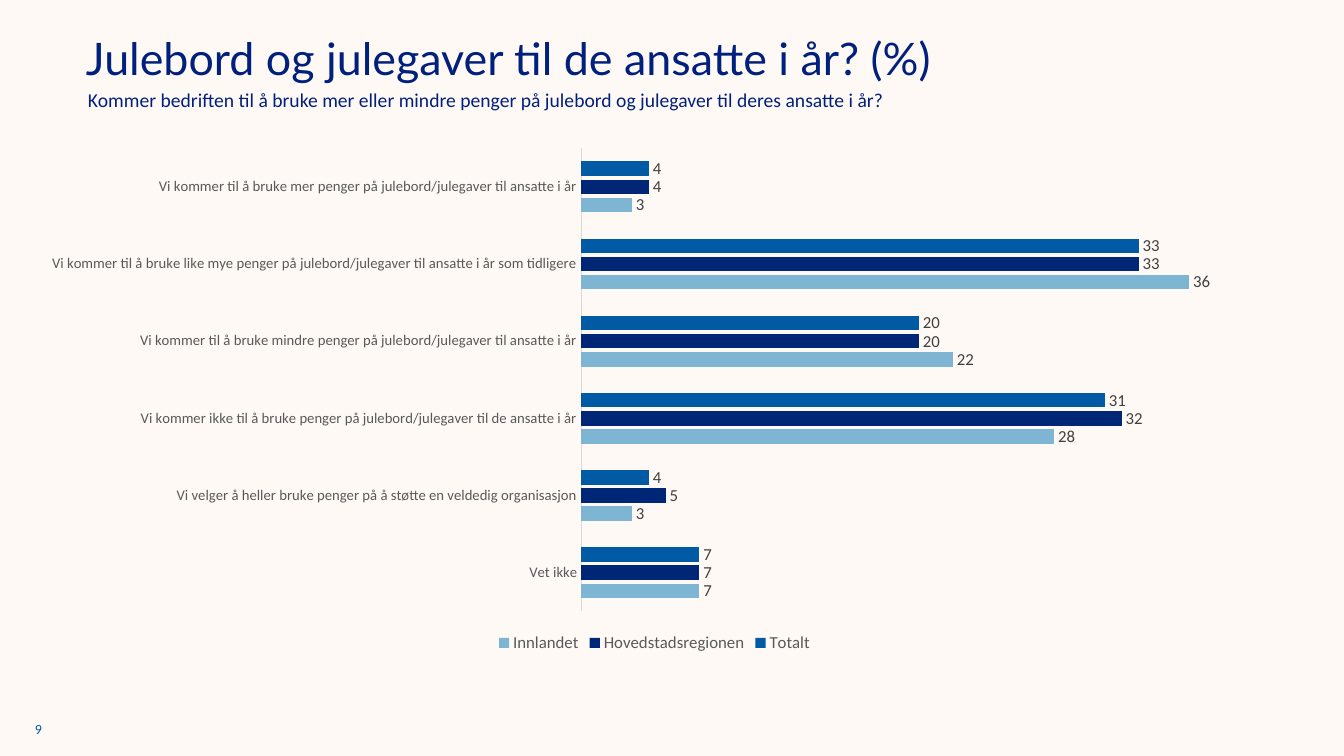
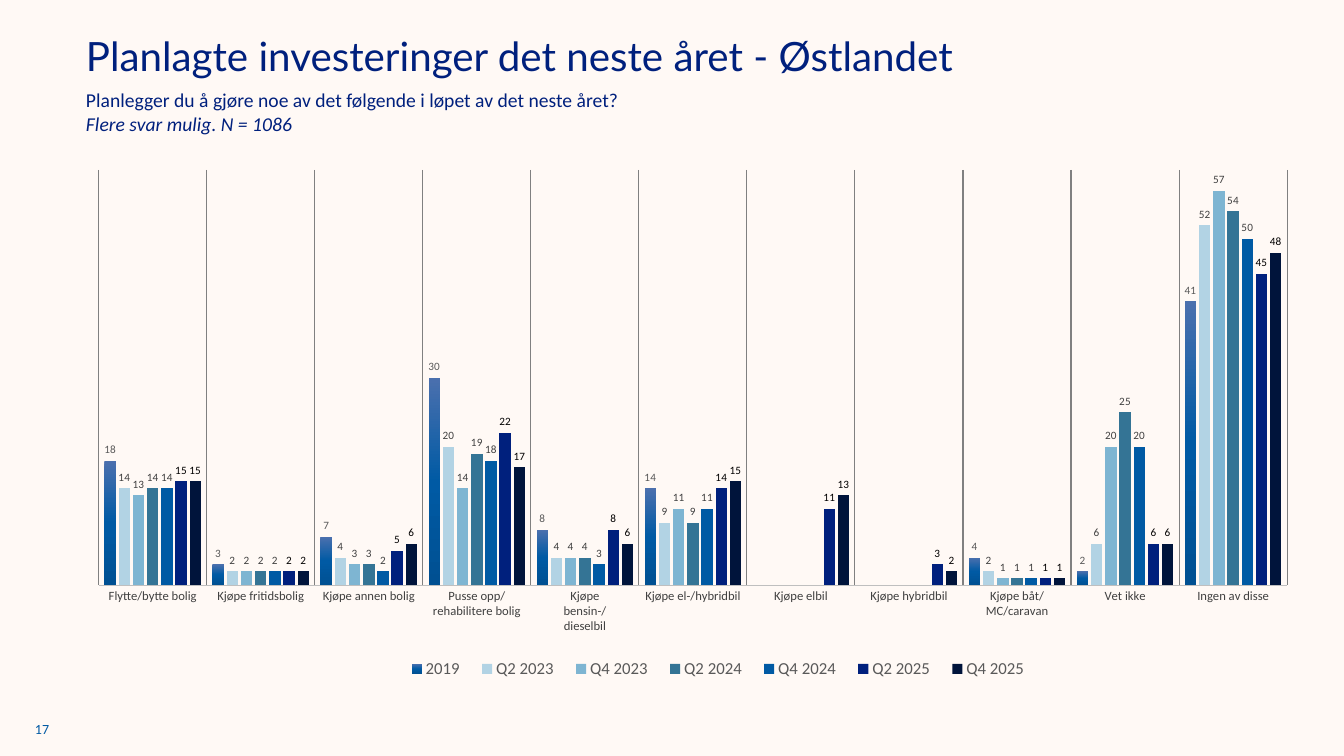
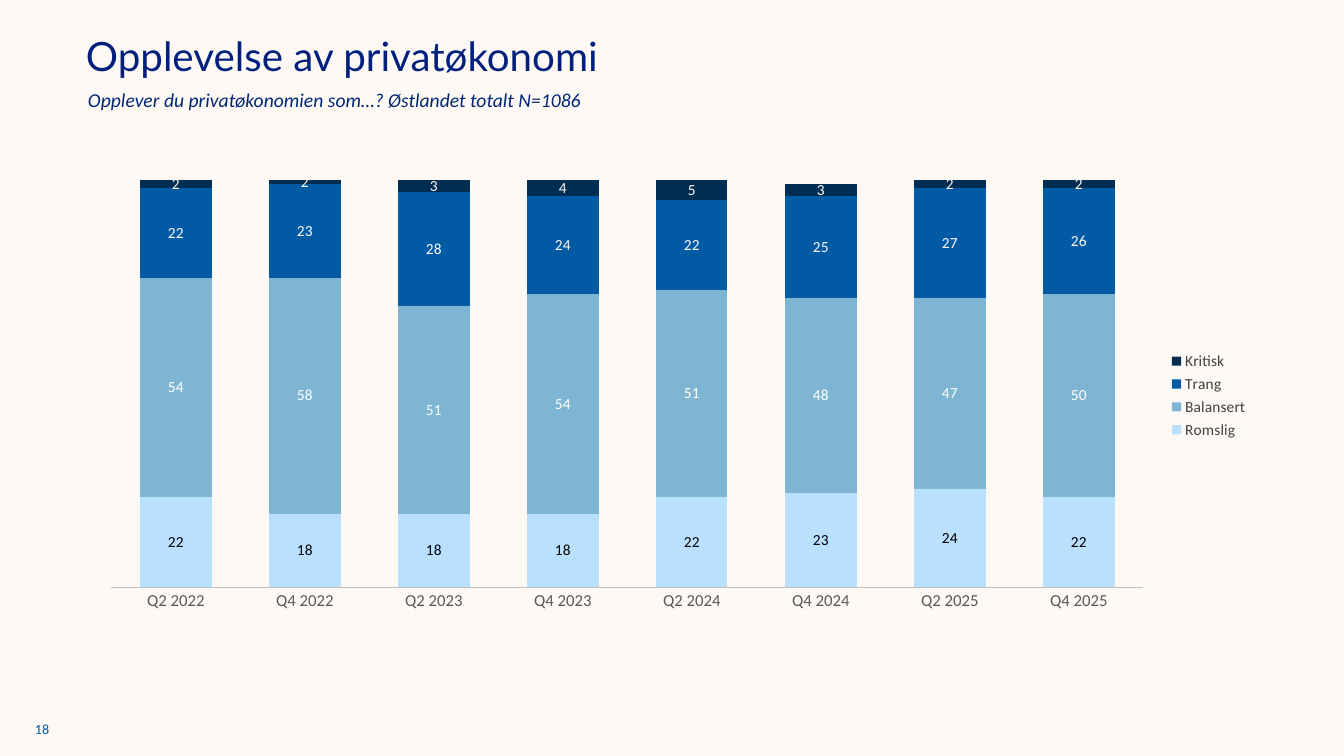
from copy import deepcopy
from dataclasses import dataclass
from typing import Optional

from lxml import etree
from pptx import Presentation
from pptx import util as u
from pptx.chart.data import CategoryChartData
from pptx.dml.color import RGBColor
from pptx.enum import chart as charts, text
from pptx.oxml import ns


@dataclass(frozen=True)
class Theme:
    font: str = "Calibri"
    title_font: str = "Lato"
    background: str = "FFF9F5"
    navy: str = "00207D"
    deep_navy: str = "002776"
    blue: str = "005AA4"
    sky: str = "7EB5D2"
    pale: str = "B2D3E4"
    ice: str = "BAE0FF"
    teal: str = "347495"
    midnight: str = "00143B"
    ink: str = "002D52"
    black: str = "000000"
    white: str = "FFFFFF"
    dark_grey: str = "404040"
    grey: str = "595959"
    grid: str = "808080"
    axis: str = "BFBFBF"
    light_axis: str = "D9D9D9"
    fade: tuple = ((0, "4B70AE"), (0.5, "005AA4"), (1, "005092"))
    title_large: float = 32
    title_size: float = 28.8
    subtitle_size: float = 14
    legend_size: float = 12
    small_legend: float = 11
    category_size: float = 10.5
    number_size: float = 10
    small_category: float = 9
    tiny: float = 8
    hairline: float = 0.75


THEME = Theme()
PX_PER_INCH = 100.8


@dataclass(frozen=True)
class Series:
    name: str
    values: tuple
    fill: object
    label_color: str


@dataclass(frozen=True)
class ChartStyle:
    kind: int
    gap: int
    overlap: int
    value_max: int
    label_size: float
    category_size: float
    category_color: str
    axis_color: str
    legend_position: int
    legend_size: float
    legend_color: str
    reverse: bool = False
    gridlines: bool = False
    label_position: Optional[int] = None


def px(length):
    return u.Emu(round(length * u.Inches(1) / PX_PER_INCH))


def frame(x, y, width, height):
    return px(x), px(y), px(width), px(height)


def style_font(font, size, color, name=THEME.font, italic=None):
    font.name = name
    font.size = u.Pt(size)
    font.color.rgb = RGBColor.from_string(color)
    font.italic = italic


def style_line(line, color):
    line.color.rgb = RGBColor.from_string(color)
    line.width = u.Pt(THEME.hairline)


def add_text(page, place, lines, size, color, name=THEME.font, italics=(),
             spacing=None, anchor=text.MSO_ANCHOR.TOP):
    """Add a text box without insets; italics holds the indexes of slanted lines."""
    box = page.shapes.add_textbox(*frame(*place)).text_frame
    box.word_wrap = True
    box.vertical_anchor = anchor
    box.margin_left = box.margin_top = box.margin_right = box.margin_bottom = 0
    box.text = "\n".join(lines)
    for index, para in enumerate(box.paragraphs):
        para.line_spacing = spacing
        for span in para.runs:
            style_font(span.font, size, color, name, index in italics or None)


def add_page(deck, number, title, subtitle, title_size=THEME.title_size,
             subtitle_x=88, subtitle_color=THEME.navy, italics=()):
    page = deck.slides.add_slide(deck.slide_layouts[6])
    add_text(page, (86, 37, 1171, 44), [title], title_size, THEME.navy,
             THEME.title_font, spacing=0.9)
    add_text(page, (subtitle_x, 88, 1171, 47), subtitle, THEME.subtitle_size,
             subtitle_color, italics=italics)
    add_text(page, (35, 720, 52, 17), [str(number)], THEME.number_size,
             THEME.blue, anchor=text.MSO_ANCHOR.MIDDLE)
    return page


def fill_gradient(series, stops):
    """Fill the bars from top to bottom through all the given stops."""
    fill = series.format.fill
    fill.gradient()
    fill.gradient_angle = 270
    stop_list = series._element.find(".//" + ns.qn("a:gsLst"))
    while len(stop_list) < len(stops):
        stop_list.append(deepcopy(stop_list[0]))
    for stop, (position, color) in zip(fill.gradient_stops, stops):
        stop.position = position
        stop.color.rgb = RGBColor.from_string(color)


def style_series(series, data, style):
    series.invert_if_negative = False
    if isinstance(data.fill, str):
        series.format.fill.solid()
        series.format.fill.fore_color.rgb = RGBColor.from_string(data.fill)
    else:
        fill_gradient(series, data.fill)
    labels = series.data_labels
    labels.show_value = True
    labels.number_format = "0"
    labels.number_format_is_linked = False
    style_font(labels.font, style.label_size, data.label_color)
    if style.label_position is not None:
        labels.position = style.label_position


def style_axes(chart, style):
    category = chart.category_axis
    category.major_tick_mark = category.minor_tick_mark = charts.XL_TICK_MARK.NONE
    category.reverse_order = style.reverse
    category.has_major_gridlines = style.gridlines
    if style.gridlines:
        style_line(category.major_gridlines.format.line, THEME.grid)
    style_line(category.format.line, style.axis_color)
    style_font(category.tick_labels.font, style.category_size, style.category_color)
    value = chart.value_axis
    value.visible = False
    value.has_major_gridlines = False
    value.minimum_scale = 0
    value.maximum_scale = style.value_max


def set_layout(element, x, y, width, height, inner=False):
    """Place a plot area or legend by fractions of the chart."""
    for old in element.findall(ns.qn("c:layout")):
        element.remove(old)
    layout = etree.Element(ns.qn("c:layout"))
    manual = etree.SubElement(layout, ns.qn("c:manualLayout"))
    settings = [("layoutTarget", "inner")] if inner else []
    settings += [("xMode", "edge"), ("yMode", "edge"),
                 ("x", x), ("y", y), ("w", width), ("h", height)]
    for tag, value in settings:
        etree.SubElement(manual, ns.qn("c:" + tag)).set("val", str(value))
    position = element.find(ns.qn("c:legendPos"))
    element.insert(0 if position is None else 1, layout)


def add_bar_chart(page, place, categories, rows, style):
    data = CategoryChartData()
    data.categories = categories
    for row in rows:
        data.add_series(row.name, row.values)
    chart = page.shapes.add_chart(style.kind, *frame(*place), data).chart
    chart.has_title = False
    style_font(chart.font, THEME.tiny, THEME.black)
    plot = chart.plots[0]
    plot.vary_by_categories = False
    plot.gap_width = style.gap
    plot.overlap = style.overlap
    for series, row in zip(plot.series, rows):
        style_series(series, row, style)
    style_axes(chart, style)
    chart.has_legend = True
    chart.legend.position = style.legend_position
    chart.legend.include_in_layout = False
    style_font(chart.legend.font, style.legend_size, style.legend_color)
    return chart


def build_christmas(deck):
    page = add_page(
        deck, 9, "Julebord og julegaver til de ansatte i år? (%)",
        ["Kommer bedriften til å bruke mer eller mindre penger på julebord "
         "og julegaver til deres ansatte i år?"],
        title_size=THEME.title_large)
    categories = [
        "Vi kommer til å bruke mer penger på julebord/julegaver til ansatte i år",
        "Vi kommer til å bruke like mye penger på julebord/julegaver til ansatte i år som tidligere",
        "Vi kommer til å bruke mindre penger på julebord/julegaver til ansatte i år",
        "Vi kommer ikke til å bruke penger på julebord/julegaver til de ansatte i år",
        "Vi velger å heller bruke penger på å støtte en veldedig organisasjon",
        "Vet ikke",
    ]
    rows = [
        Series("Totalt", (4, 33, 20, 31, 4, 7), THEME.blue, THEME.dark_grey),
        Series("Hovedstadsregionen", (4, 33, 20, 32, 5, 7), THEME.deep_navy, THEME.dark_grey),
        Series("Innlandet", (3, 36, 22, 28, 3, 7), THEME.sky, THEME.dark_grey),
    ]
    style = ChartStyle(
        kind=charts.XL_CHART_TYPE.BAR_CLUSTERED, gap=182, overlap=-25, value_max=40,
        label_size=THEME.legend_size, category_size=THEME.category_size,
        category_color=THEME.grey, axis_color=THEME.light_axis,
        legend_position=charts.XL_LEGEND_POSITION.BOTTOM,
        legend_size=THEME.legend_size, legend_color=THEME.grey, reverse=True,
        label_position=charts.XL_LABEL_POSITION.OUTSIDE_END)
    add_bar_chart(page, (27, 138, 1255, 519), categories, rows, style)


def build_investments(deck):
    page = add_page(
        deck, 17, "Planlagte investeringer det neste året - Østlandet",
        ["Planlegger du å gjøre noe av det følgende i løpet av det neste året?",
         "Flere svar mulig. N = 1086"],
        subtitle_x=86, italics=(1,))
    categories = [
        "Flytte/bytte bolig", "Kjøpe fritidsbolig", "Kjøpe annen bolig",
        "Pusse opp/rehabilitere bolig", "Kjøpe bensin-/dieselbil",
        "Kjøpe el-/hybridbil", "Kjøpe elbil", "Kjøpe hybridbil",
        "Kjøpe båt/MC/caravan", "Vet ikke", "Ingen av disse",
    ]
    rows = [
        Series("2019", (18, 3, 7, 30, 8, 14, None, None, 4, 2, 41), THEME.fade, THEME.grey),
        Series("Q2 2023", (14, 2, 4, 20, 4, 9, None, None, 2, 6, 52), THEME.pale, THEME.dark_grey),
        Series("Q4 2023", (13, 2, 3, 14, 4, 11, None, None, 1, 20, 57), THEME.sky, THEME.dark_grey),
        Series("Q2 2024", (14, 2, 3, 19, 4, 9, None, None, 1, 25, 54), THEME.teal, THEME.dark_grey),
        Series("Q4 2024", (14, 2, 2, 18, 3, 11, None, None, 1, 20, 50), THEME.blue, THEME.dark_grey),
        Series("Q2 2025", (15, 2, 5, 22, 8, 14, 11, 3, 1, 6, 45), THEME.navy, THEME.black),
        Series("Q4 2025", (15, 2, 6, 17, 6, 15, 13, 2, 1, 6, 48), THEME.midnight, THEME.black),
    ]
    style = ChartStyle(
        kind=charts.XL_CHART_TYPE.COLUMN_CLUSTERED, gap=100, overlap=-24, value_max=60,
        label_size=THEME.tiny, category_size=THEME.small_category,
        category_color=THEME.dark_grey, axis_color=THEME.axis,
        legend_position=charts.XL_LEGEND_POSITION.TOP,
        legend_size=THEME.legend_size, legend_color=THEME.grey, gridlines=True,
        label_position=charts.XL_LABEL_POSITION.OUTSIDE_END)
    chart = add_bar_chart(page, (78, 164, 1219, 526), categories, rows, style)
    plot_area = chart._chartSpace.find(".//" + ns.qn("c:plotArea"))
    legend = chart._chartSpace.find(".//" + ns.qn("c:legend"))
    set_layout(plot_area, 0.017, 0.011, 0.975, 0.79, inner=True)
    set_layout(legend, 0.26, 0.93, 0.53, 0.06)


def build_economy(deck):
    page = add_page(
        deck, 18, "Opplevelse av privatøkonomi",
        ["Opplever du privatøkonomien som…? Østlandet totalt N=1086"],
        subtitle_color=THEME.deep_navy, italics=(0,))
    categories = [f"{quarter} {year}" for year in range(2025, 2021, -1)
                  for quarter in ("Q4", "Q2")]
    rows = [
        Series("Romslig", (22, 24, 23, 22, 18, 18, 18, 22), THEME.ice, THEME.black),
        Series("Balansert", (50, 47, 48, 51, 54, 51, 58, 54), THEME.sky, THEME.white),
        Series("Trang", (26, 27, 25, 22, 24, 28, 23, 22), THEME.blue, THEME.background),
        Series("Kritisk", (2, 2, 3, 5, 4, 3, 2, 2), THEME.ink, THEME.background),
    ]
    style = ChartStyle(
        kind=charts.XL_CHART_TYPE.COLUMN_STACKED, gap=81, overlap=100, value_max=100,
        label_size=THEME.small_legend, category_size=THEME.legend_size,
        category_color=THEME.grey, axis_color=THEME.axis,
        legend_position=charts.XL_LEGEND_POSITION.RIGHT,
        legend_size=THEME.small_legend, legend_color=THEME.dark_grey, reverse=True)
    add_bar_chart(page, (88, 171, 1171, 449), categories, rows, style)


def main():
    deck = Presentation()
    deck.slide_width, deck.slide_height = px(1344), px(756)
    backdrop = deck.slide_master.background.fill
    backdrop.solid()
    backdrop.fore_color.rgb = RGBColor.from_string(THEME.background)
    for build in (build_christmas, build_investments, build_economy):
        build(deck)
    deck.save("out.pptx")


if __name__ == "__main__":
    main()
